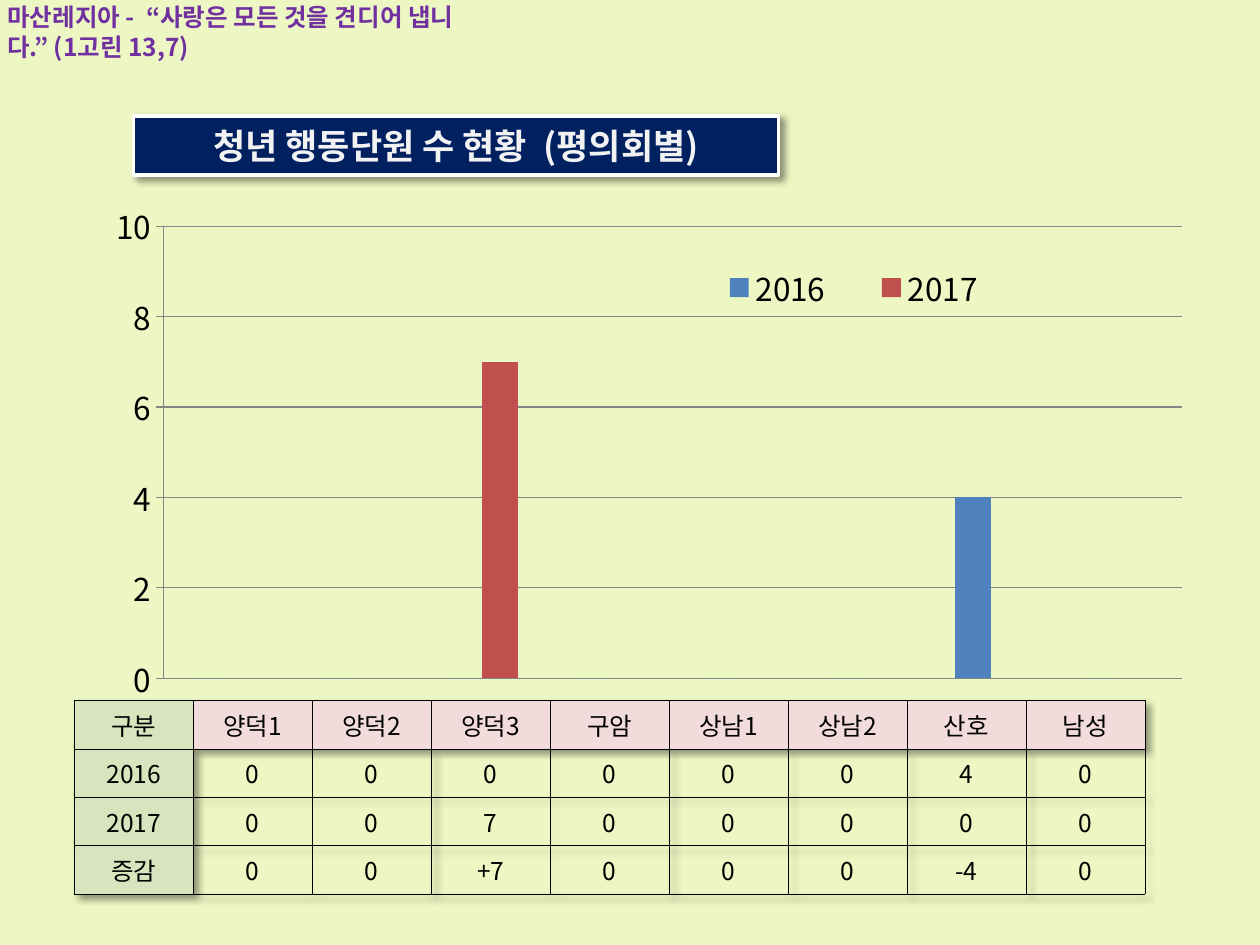
from pptx import Presentation, util as u
from pptx.chart.data import CategoryChartData
from pptx.dml.color import RGBColor
from pptx.enum import chart as ch, text
from pptx.oxml import parse_xml
from pptx.oxml.ns import nsdecls, qn

WIDTH, HEIGHT = u.Inches(10), u.Inches(7.5)
FONT = "Noto Sans CJK KR"
BLACK, GRAY, WHITE = "000000", "868686", "FFFFFF"
COUNCILS = ["양덕1", "양덕2", "양덕3", "구암", "상남1", "상남2", "산호", "남성"]
MEMBERS = {"2016": [0, 0, 0, 0, 0, 0, 4, 0], "2017": [0, 0, 7, 0, 0, 0, 0, 0]}
YEAR_COLORS = ["4F81BD", "C0504D"]


def rgb(value):
    """Turn a hex string into a colour."""
    return RGBColor.from_string(value)


def box(left, top, width, height):
    """Turn inches into a position and size."""
    return [u.Inches(n) for n in (left, top, width, height)]


def fill(target, color):
    """Fill a shape, cell, bar or background with one colour."""
    target.fill.solid()
    target.fill.fore_color.rgb = rgb(color)


def write(frame, words, size, color, bold=False, align=None):
    """Write one paragraph with the same font for Latin and Korean."""
    frame.text = words
    paragraph = frame.paragraphs[0]
    paragraph.alignment = align
    font = paragraph.font
    font.size, font.bold, font.name = u.Pt(size), bold, FONT
    font.color.rgb = rgb(color)
    defaults = paragraph._p.pPr.find(qn("a:defRPr"))
    defaults.append(parse_xml(f'<a:ea {nsdecls("a")} typeface="{FONT}"/>'))


def shadow():
    """Make a soft shadow that falls to the lower right."""
    return parse_xml(
        f'<a:effectLst {nsdecls("a")}>'
        f'<a:outerShdw blurRad="{u.Pt(4)}" dist="{u.Pt(3)}" dir="2700000" algn="tl" rotWithShape="0">'
        '<a:srgbClr val="000000"><a:alpha val="40000"/></a:srgbClr>'
        '</a:outerShdw></a:effectLst>')


def add_borders(cell):
    """Draw thin black lines on all sides of a cell."""
    properties = cell._tc.get_or_add_tcPr()
    for index, side in enumerate(("lnL", "lnR", "lnT", "lnB")):
        properties.insert(index, parse_xml(
            f'<a:{side} {nsdecls("a")} w="{u.Pt(0.25)}"><a:solidFill>'
            f'<a:srgbClr val="{BLACK}"/></a:solidFill></a:{side}>'))


def add_table(slide):
    """Tabulate both years and the change between them."""
    changes = [new - old for old, new in zip(*MEMBERS.values())]
    rows = [["구분", *COUNCILS]]
    rows += [[year, *counts] for year, counts in MEMBERS.items()]
    rows.append(["증감", *(f"{n:+d}" if n else "0" for n in changes)])
    table = slide.shapes.add_table(
        len(rows), len(rows[0]), *box(0.59, 5.56, 8.5, 1.52)).table
    table.horz_banding = False
    table._tbl.tblPr.insert(0, shadow())
    for r, row in enumerate(rows):
        for c, value in enumerate(row):
            cell = table.cell(r, c)
            cell.vertical_anchor = text.MSO_ANCHOR.MIDDLE
            write(cell.text_frame, str(value), 14, BLACK, align=text.PP_ALIGN.CENTER)
            if c == 0:
                fill(cell, "D7E4BD")
            elif r == 0:
                fill(cell, "F2DCDB")
            else:
                cell.fill.background()
            add_borders(cell)


def set_layout(element, x, y, w, h, inner=False):
    """Place a chart part by shares of the chart's size."""
    old = element.find(qn("c:layout"))
    if old is not None:
        element.remove(old)
    target = '<c:layoutTarget val="inner"/>' if inner else ""
    layout = parse_xml(
        f'<c:layout {nsdecls("c")}><c:manualLayout>{target}'
        '<c:xMode val="edge"/><c:yMode val="edge"/>'
        f'<c:x val="{x}"/><c:y val="{y}"/><c:w val="{w}"/><c:h val="{h}"/>'
        '</c:manualLayout></c:layout>')
    if inner:
        element.insert(0, layout)
    else:
        element.find(qn("c:legendPos")).addnext(layout)


def add_chart(slide):
    """Chart the members of each council for both years."""
    data = CategoryChartData()
    data.categories = [str(n + 1) for n in range(len(COUNCILS))]
    for year, counts in MEMBERS.items():
        data.add_series(year, counts)
    chart = slide.shapes.add_chart(
        ch.XL_CHART_TYPE.COLUMN_CLUSTERED, *box(0.67, 1.53, 8.98, 4.43), data).chart
    chart.has_title = False
    chart.font.size, chart.font.name = u.Pt(18), FONT
    chart.font.color.rgb = rgb(BLACK)
    plot = chart.plots[0]
    plot.gap_width, plot.overlap, plot.vary_by_categories = 150, 0, False
    for series, color in zip(plot.series, YEAR_COLORS):
        fill(series.format, color)
    chart.category_axis.visible = False
    axis = chart.value_axis
    axis.minimum_scale, axis.maximum_scale, axis.major_unit = 0, 10, 2
    axis.major_tick_mark = ch.XL_TICK_MARK.OUTSIDE
    for line in (axis.format.line, axis.major_gridlines.format.line):
        line.color.rgb, line.width = rgb(GRAY), u.Pt(0.75)
    chart.has_legend = True
    chart.legend.position = ch.XL_LEGEND_POSITION.RIGHT
    chart.legend.include_in_layout = False
    set_layout(chart.legend._element, 0.53, 0.12, 0.3, 0.1)
    set_layout(chart._chartSpace.chart.plotArea, 0.07, 0.06, 0.9, 0.81, inner=True)


def add_motto(slide):
    """Write the motto in the top left corner."""
    motto = slide.shapes.add_textbox(*box(-0.04, -0.03, 3.93, 0.34)).text_frame
    motto.word_wrap = True
    write(motto, "마산레지아 -  “사랑은 모든 것을 견디어 냅니다.” (1고린 13,7)",
          14, "7030A0", bold=True)


def format_title(slide):
    """Turn the title into a dark pill with a white rim."""
    title = slide.shapes.title
    title.left, title.top, title.width, title.height = box(1.06, 0.92, 5.12, 0.47)
    properties = title._element.spPr
    properties.append(parse_xml(
        f'<a:prstGeom {nsdecls("a")} prst="roundRect"><a:avLst>'
        '<a:gd name="adj" fmla="val 50000"/></a:avLst></a:prstGeom>'))
    fill(title, "002060")
    title.line.color.rgb, title.line.width = rgb(WHITE), u.Pt(2)
    properties.append(shadow())
    title.text_frame.vertical_anchor = text.MSO_ANCHOR.MIDDLE
    write(title.text_frame, "청년 행동단원 수 현황  (평의회별)",
          20, "F2F2F2", bold=True, align=text.PP_ALIGN.CENTER)


def main():
    """Build the slide and save it."""
    deck = Presentation()
    deck.slide_width, deck.slide_height = WIDTH, HEIGHT
    slide = deck.slides.add_slide(deck.slide_layouts[5])
    fill(slide.background, "EDF7C3")
    add_table(slide)
    add_chart(slide)
    add_motto(slide)
    format_title(slide)
    deck.save("out.pptx")


if __name__ == "__main__":
    main()
